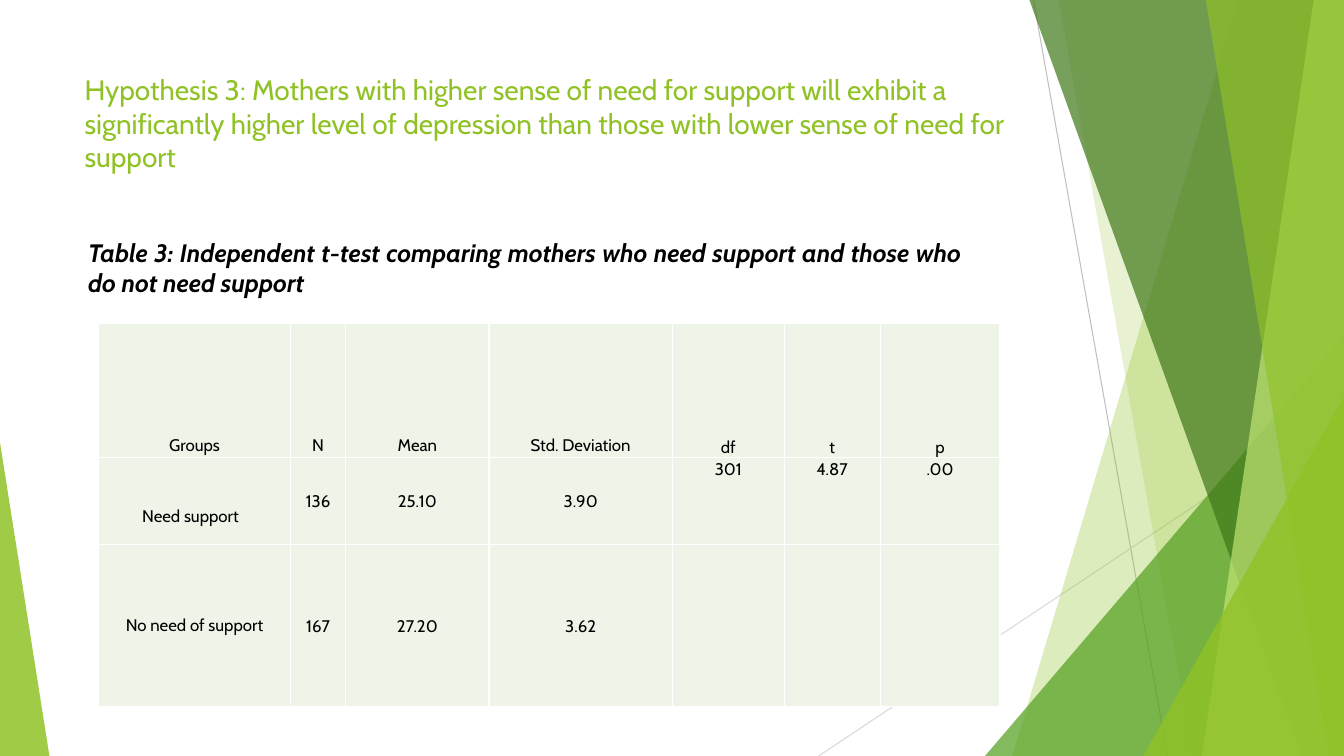
"""Build the slide on hypothesis 3 with its t-test table."""
from dataclasses import dataclass

from lxml.etree import SubElement
from pptx import Presentation
from pptx.dml.color import RGBColor
from pptx.enum.shapes import MSO_CONNECTOR, MSO_SHAPE
from pptx.enum.text import MSO_ANCHOR, PP_ALIGN
from pptx.oxml import parse_xml
from pptx.oxml.ns import nsdecls, qn
from pptx.util import Inches, Pt

WHITE = RGBColor(0xFF, 0xFF, 0xFF)
BLACK = RGBColor(0x00, 0x00, 0x00)
LIME = RGBColor(0x90, 0xC2, 0x26)
GRASS = RGBColor(0x54, 0xA0, 0x21)
FOREST = RGBColor(0x3F, 0x78, 0x19)
PALE = RGBColor(0xC0, 0xE4, 0x74)
MIST = RGBColor(0xEE, 0xF4, 0xE8)
GREY = RGBColor(0xBF, 0xBF, 0xBF)
SILVER = RGBColor(0xD9, 0xD9, 0xD9)
FONT = "Cabin"
WIDE, HIGH = 13.33, 7.5

TITLE = ("Hypothesis 3: Mothers with higher sense of need for support will exhibit a "
         "significantly higher level of depression than those with lower sense of need "
         "for support")
LABEL = ("Table 3: Independent t-test comparing mothers who need support "
         "and those who do not need support")
COLS = [1.9, 0.55, 1.42, 1.82, 1.11, 0.95, 1.19]
ROWS = [1.33, 0.86, 1.61]
DATA = [
    ["Groups", "N", "Mean", "Std. Deviation", "df", "t", "p"],
    ["Need support", "136", "25.10", "3.90", "301", "4.87", ".00"],
    ["No need of support", "167", "27.20", "3.62", "", "", ""],
]
GAPS = {1: {"margin_top": Inches(0.46), "margin_right": Inches(0.1)},
        2: {"margin_top": Inches(0.69)}}


@dataclass
class Line:
    start: tuple[float, float]
    end: tuple[float, float]
    tint: RGBColor


@dataclass
class Band:
    top: float
    base: float
    tint: RGBColor
    alpha: int


@dataclass
class Wedge:
    left: float
    top: float
    width: float
    peak: float
    tint: RGBColor
    alpha: int


DECOR = [
    Line((10.25, 0), (11.58, HIGH), GREY),
    Line((WIDE, 4.03), (8.12, HIGH), SILVER),
    Band(12.28, 10.04, LIME, 30),
    Band(10.5, 11.83, LIME, 20),
    Wedge(9.77, 3.33, 3.56, 1, GRASS, 72),
    Band(10.21, 12.91, FOREST, 70),
    Band(13.03, 11.92, PALE, 70),
    Band(11.96, 13.18, LIME, 65),
    Wedge(11.34, 3.93, 1.99, 1, LIME, 80),
    Wedge(0, 4.39, 0.49, 0, LIME, 85),
]


def apply(thing, form: dict) -> None:
    for name, value in form.items():
        setattr(thing, name, value)


def write(frame, text: str, align, size: int, tint: RGBColor, **form) -> None:
    para = frame.paragraphs[0]
    para.alignment = align
    run = para.add_run()
    run.text = text
    apply(run.font, {"name": FONT, "size": Pt(size), **form})
    run.font.color.rgb = tint


def paint(shape, tint: RGBColor, alpha: int = 100) -> None:
    shape.shadow.inherit = False
    shape.line.fill.background()
    shape.fill.solid()
    shape.fill.fore_color.rgb = tint
    if alpha < 100:
        hue = shape.fill._xPr.find(".//" + qn("a:srgbClr"))
        SubElement(hue, qn("a:alpha"), val=str(alpha * 1000))


def draw(shapes, part: Line | Band | Wedge) -> None:
    if isinstance(part, Line):
        ends = [Inches(n) for n in part.start + part.end]
        line = shapes.add_connector(MSO_CONNECTOR.STRAIGHT, *ends)
        line.line.color.rgb = part.tint
        line.line.width = Pt(0.75)
        SubElement(line._element.spPr, qn("a:effectLst"))
        return
    if isinstance(part, Band):
        path = shapes.build_freeform(Inches(part.top), 0)
        spots = [(WIDE, 0), (WIDE, HIGH), (part.base, HIGH)]
        path.add_line_segments([(Inches(x), Inches(y)) for x, y in spots])
        shape = path.convert_to_shape()
    else:
        shape = shapes.add_shape(
            MSO_SHAPE.ISOSCELES_TRIANGLE, Inches(part.left), Inches(part.top),
            Inches(part.width), Inches(HIGH - part.top))
        shape.adjustments[0] = part.peak
    paint(shape, part.tint, part.alpha)


def edge(cell) -> None:
    props = cell._tc.get_or_add_tcPr()
    for spot, side in enumerate("LRTB"):
        props.insert(spot, parse_xml(
            f'<a:ln{side} {nsdecls("a")} w="12700"><a:solidFill>'
            f'<a:srgbClr val="{WHITE}"/></a:solidFill></a:ln{side}>'))


def style(row: int, col: int) -> dict:
    form = {"margin_left": Inches(0.02), "margin_right": Inches(0.02),
            "margin_top": Inches(0.02), "margin_bottom": Inches(0.02),
            "vertical_anchor": MSO_ANCHOR.MIDDLE}
    if row == 0:
        form["vertical_anchor"] = MSO_ANCHOR.BOTTOM
    elif col == 0 or col > 3:
        form["vertical_anchor"] = MSO_ANCHOR.TOP
    if col > 3:
        form.update(margin_top=0, margin_bottom=0)
    if col == 0:
        form.update(GAPS.get(row, {}))
    return form


def grid(shapes) -> None:
    table = shapes.add_table(len(ROWS), len(COLS), Inches(0.98), Inches(3.21),
                             Inches(sum(COLS)), Inches(sum(ROWS))).table
    apply(table, {"first_row": False, "horz_banding": False})
    for col, width in zip(table.columns, COLS):
        col.width = Inches(width)
    for r, (high, words) in enumerate(zip(ROWS, DATA)):
        table.rows[r].height = Inches(high)
        for c, text in enumerate(words):
            cell = table.cell(r, c)
            apply(cell, style(r, c))
            cell.fill.solid()
            cell.fill.fore_color.rgb = MIST
            edge(cell)
            if text:
                write(cell.text_frame, text, PP_ALIGN.CENTER, 12, BLACK)
                cell.text_frame.paragraphs[0].line_spacing = Pt(16)


def main() -> None:
    deck = Presentation()
    apply(deck, {"slide_width": Inches(WIDE), "slide_height": Inches(HIGH)})
    shapes = deck.slides.add_slide(deck.slide_layouts[6]).shapes
    for part in DECOR:
        draw(shapes, part)
    title = shapes.add_textbox(Inches(0.74), Inches(0.67), Inches(9.4), Inches(1.44))
    title.text_frame.word_wrap = True
    write(title.text_frame, TITLE, PP_ALIGN.LEFT, 20, LIME)
    grid(shapes)
    label = shapes.add_shape(MSO_SHAPE.ROUNDED_RECTANGLE, Inches(0.74), Inches(2.29),
                             Inches(8.93), Inches(0.72))
    paint(label, WHITE)
    apply(label.text_frame, {"word_wrap": True, "vertical_anchor": MSO_ANCHOR.MIDDLE})
    write(label.text_frame, LABEL, PP_ALIGN.JUSTIFY, 18, BLACK, bold=True, italic=True)
    deck.save("out.pptx")


if __name__ == "__main__":
    main()
